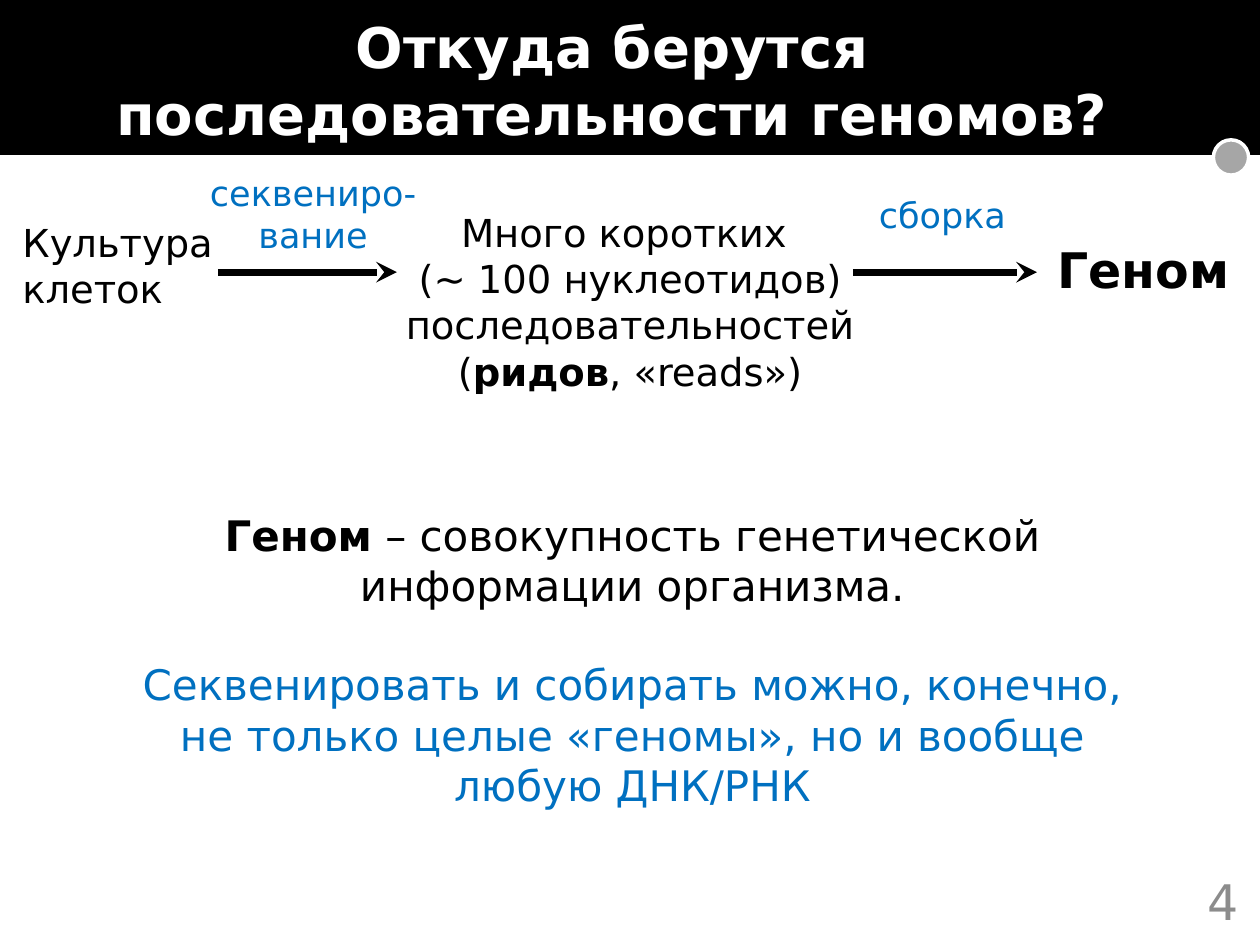
from lxml.etree import SubElement
from pptx import Presentation
from pptx.dml.color import RGBColor
from pptx.enum.shapes import MSO_CONNECTOR as Connector, MSO_SHAPE as Preset
from pptx.enum.text import MSO_ANCHOR as Anchor, MSO_AUTO_SIZE as AutoSize, PP_ALIGN as Align
from pptx.oxml.ns import qn
from pptx.util import Inches, Pt

COLORS = {
    "black": "000000",
    "white": "FFFFFF",
    "blue": "0070C0",
    "dot": "A6A6A6",
    "number": "8C8C8C",
}


def rgb(name):
    return RGBColor.from_string(COLORS[name])


class GenomeSlide:
    font = "DejaVu Sans"

    def __init__(self, slide):
        self.slide = slide
        self.shapes = slide.shapes

    def set_text(self, box, at, paragraphs, size, color="black", align=Align.CENTER,
                 anchor=Anchor.TOP, auto_size=AutoSize.SHAPE_TO_FIT_TEXT, gap=0):
        for side, value in zip(("left", "top", "width", "height"), at):
            setattr(box, side, Inches(value))
        frame = box.text_frame
        layout = {"word_wrap": True, "auto_size": auto_size, "vertical_anchor": anchor}
        for key, value in layout.items():
            setattr(frame, key, value)
        for index, runs in enumerate(paragraphs):
            paragraph = frame.add_paragraph() if index else frame.paragraphs[0]
            properties = paragraph._p.get_or_add_pPr()
            properties.set("marL", "0")
            properties.set("indent", "0")
            SubElement(properties, qn("a:buNone"))
            spacing = {"alignment": align, "space_before": Pt(gap if index else 0)}
            for key, value in spacing.items():
                setattr(paragraph, key, value)
            for text, changes in runs:
                run = paragraph.add_run()
                run.text = text
                style = {"name": self.font, "size": Pt(size), "bold": False, **changes}
                run_color = style.pop("color", color)
                for key, value in style.items():
                    setattr(run.font, key, value)
                run.font.color.rgb = rgb(run_color)

    def label(self, at, paragraphs, size, **options):
        box = self.shapes.add_textbox(*map(Inches, at))
        self.set_text(box, at, paragraphs, size, **options)

    def shape(self, preset, at, fill, outline=None):
        shape = self.shapes.add_shape(preset, *map(Inches, at))
        shape.shadow.inherit = False
        shape.fill.solid()
        shape.fill.fore_color.rgb = rgb(fill)
        if outline:
            shape.line.color.rgb = rgb(outline)
            shape.line.width = Pt(2)
        else:
            shape.line.fill.background()
        return shape

    def line(self, start, end, y, color, width, arrow=False):
        line = self.shapes.add_connector(
            Connector.STRAIGHT, Inches(start), Inches(y), Inches(end), Inches(y))
        line.line.color.rgb = rgb(color)
        line.line.width = Pt(width)
        if arrow:
            SubElement(line.element.spPr.find(qn("a:ln")), qn("a:tailEnd"), type="stealth")
        SubElement(line.element.spPr, qn("a:effectLst"))


def main():
    presentation = Presentation()
    presentation.slide_width = Inches(10)
    presentation.slide_height = Inches(7.5)
    slide = presentation.slides.add_slide(presentation.slide_layouts[1])
    page = GenomeSlide(slide)
    title, definition = slide.placeholders
    bold = {"bold": True}

    header = page.shape(Preset.RECTANGLE, (0, 0, 10, 1.23), "black")
    title.element.addprevious(header.element)
    page.line(0, 9.67, 1.25, "white", 2)
    page.shape(Preset.OVAL, (9.63, 1.11, 0.28, 0.28), "dot", "white")
    page.set_text(title, (0, 0.05, 9.72, 1.18),
                  [[("Откуда берутся последовательности геномов?", bold)]], 32, color="white")

    page.label((0.08, 1.69, 2.05, 0.84), [[("Культура клеток", {})]], 22, align=Align.LEFT)
    page.label((2.99, 1.61, 4.02, 1.58), [
        [("Много коротких ", {})],
        [("(~ 100 нуклеотидов) последовательностей", {})],
        [("(", {}), ("ридов", bold), (", «reads»)", {})],
    ], 22)
    page.label((8.27, 1.85, 1.61, 0.57), [[("Геном", bold)]], 28)

    for start, end in ((1.73, 3.15), (6.77, 8.23)):
        page.line(start, end, 2.16, "black", 4, arrow=True)
    for step, at in (("секвениро-вание", (1.54, 1.31, 1.89, 0.77)),
                     ("сборка", (6.73, 1.49, 1.5, 0.44))):
        page.label(at, [[(step, {})]], 20, color="blue")

    page.set_text(definition, (0.91, 3.99, 8.22, 2.52), [
        [("Геном", bold), (" – совокупность генетической информации организма.", {})],
        [("Секвенировать и собирать можно, конечно, не только целые «геномы», "
          "но и вообще любую ДНК/РНК", {"color": "blue"})],
    ], 24, gap=28)
    page.label((7.6, 6.95, 2.33, 0.4), [[("4", {})]], 28, color="number",
               align=Align.RIGHT, anchor=Anchor.MIDDLE, auto_size=AutoSize.NONE)

    presentation.save("out.pptx")


if __name__ == "__main__":
    main()
